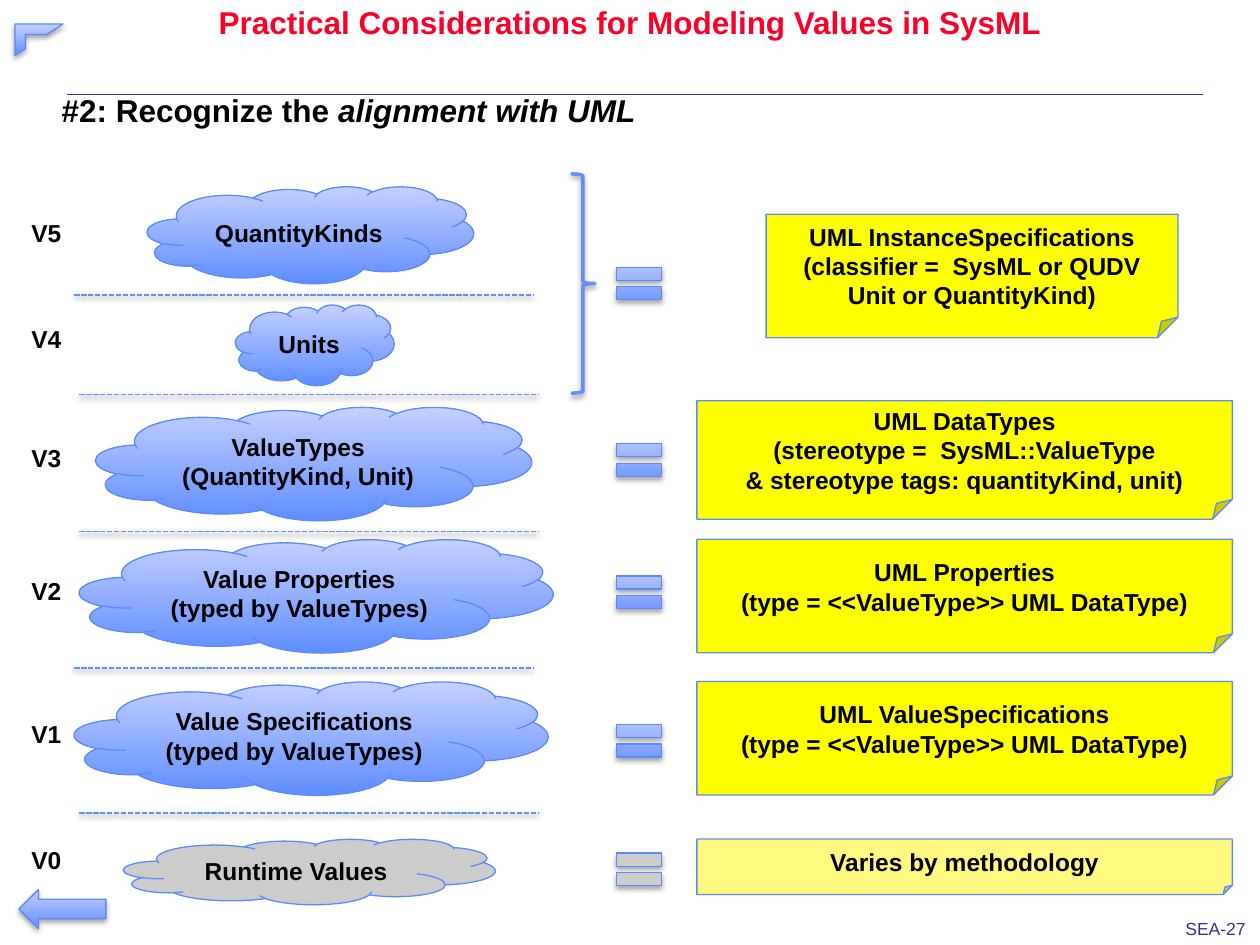
from lxml import etree
from pptx import Presentation
from pptx.dml.color import RGBColor
from pptx.enum.dml import MSO_LINE
from pptx.enum.shapes import MSO_CONNECTOR, MSO_SHAPE
from pptx.enum.text import MSO_ANCHOR, PP_ALIGN
from pptx.oxml.ns import qn
from pptx.util import Pt

CLOUD, NOTE = MSO_SHAPE.CLOUD, MSO_SHAPE.FOLDED_CORNER
EQUAL, BRACE = MSO_SHAPE.MATH_EQUAL, MSO_SHAPE.RIGHT_BRACE
ARROW, FRAME = MSO_SHAPE.LEFT_ARROW, MSO_SHAPE.HALF_FRAME
STRAIGHT, DASH = MSO_CONNECTOR.STRAIGHT, MSO_LINE.SQUARE_DOT
TOP, MIDDLE = MSO_ANCHOR.TOP, MSO_ANCHOR.MIDDLE
LEFT, CENTER = PP_ALIGN.LEFT, PP_ALIGN.CENTER

BLACK = RGBColor(0, 0, 0)
RED = RGBColor(0xFC, 0x01, 0x28)
NAVY = RGBColor(0x33, 0x33, 0x99)
EDGE = RGBColor(0x5B, 0x8A, 0xFB)
BLUE = RGBColor(0x61, 0x8F, 0xFD)
DEEP = RGBColor(0x5F, 0x8E, 0xFF)
PALE = RGBColor(0xC4, 0xD0, 0xFF)
GREY = RGBColor(0xCC, 0xCC, 0xCC)
YELLOW = RGBColor(0xFF, 0xFF, 0x00)
CREAM = RGBColor(0xFF, 0xF9, 0x81)
SHADE = (DEEP, PALE)

TITLE = "Practical Considerations for Modeling Values in SysML"
LEAD = [("#2: Recognize the ", False), ("alignment with UML", True)]
PAGE = "SEA-27"

LEVELS = [
    ("V5", 121, ["QuantityKinds"], (84.2, 106.6, 186.5, 55.4), SHADE),
    ("V4", 181.4, ["Units"], (134.6, 174.2, 90.7, 46.1), SHADE),
    ("V3", 249.8, ["ValueTypes", "(QuantityKind, Unit)"],
     (54.7, 232.6, 249.1, 64.8), SHADE),
    ("V2", 325.4, ["Value Properties", "(typed by ValueTypes)"],
     (45.4, 308.2, 270.7, 64.8), SHADE),
    ("V1", 407.5, ["Value Specifications", "(typed by ValueTypes)"],
     (42.5, 389.5, 270.7, 64.8), SHADE),
    ("V0", 479.5, ["Runtime Values"], (70.6, 479.5, 212.4, 37.4), GREY),
]
RULES = [(42.5, 168.5), (45.4, 225.4), (45.4, 303.8),
         (42.5, 381.6), (45.4, 464.4)]
NOTES = [
    (["UML InstanceSpecifications", "(classifier =  SysML or QUDV",
      "Unit or QuantityKind)"],
     (437.8, 122.4, 235.4, 70.6), YELLOW, 146.2, SHADE),
    (["UML DataTypes", "(stereotype =  SysML::ValueType",
      "& stereotype tags: quantityKind, unit)"],
     (398.2, 229, 306, 67.7), YELLOW, 247, SHADE),
    (["UML Properties", "(type = <<ValueType>> UML DataType)"],
     (398.2, 308.2, 306, 64.8), YELLOW, 322.6, SHADE),
    (["UML ValueSpecifications", "(type = <<ValueType>> UML DataType)"],
     (398.2, 389.5, 306, 64.8), YELLOW, 407.5, SHADE),
    (["Varies by methodology"],
     (398.2, 479.5, 306, 31.7), CREAM, 481, GREY),
]
ICONS = [(ARROW, (10.8, 508.3, 49.7, 22.3)), (FRAME, (8.6, 13.7, 27.4, 18))]


def write(frame, lines, size=14, color=BLACK, bold=True, align=CENTER,
          anchor=MIDDLE, wrap=True, space=None):
    frame.word_wrap = wrap
    frame.vertical_anchor = anchor
    for i, line in enumerate(lines):
        para = frame.add_paragraph() if i else frame.paragraphs[0]
        para.alignment = align
        if space:
            para.line_spacing = space
        for text, slant in [(line, False)] if isinstance(line, str) else line:
            run = para.add_run()
            run.text = text
            font = run.font
            font.name, font.size, font.bold = "Arial", Pt(size), bold
            font.color.rgb = color
            if slant:
                font.italic = True


def effect(item, alpha=0, dist=0):
    group = etree.SubElement(item.element.spPr, qn("a:effectLst"))
    if alpha:
        cast = etree.SubElement(
            group, qn("a:outerShdw"), blurRad=str(Pt(3.1)),
            dist=str(Pt(dist)), dir="5400000", rotWithShape="0")
        tint = etree.SubElement(cast, qn("a:srgbClr"), val="000000")
        etree.SubElement(tint, qn("a:alpha"), val=str(alpha * 1000))


def draw(kind, box, paint, alpha=0, dist=1.8, edge=EDGE, width=0.75):
    item = slide.shapes.add_shape(kind, *map(Pt, box))
    fill = item.fill
    if paint is None:
        fill.background()
    elif paint is SHADE:
        fill.gradient()
        fill.gradient_angle = 90
        for stop, color in zip(fill.gradient_stops, paint):
            stop.color.rgb = color
    else:
        fill.solid()
        fill.fore_color.rgb = paint
    item.line.color.rgb = edge
    item.line.width = Pt(width)
    effect(item, alpha, dist)
    return item


def rule(left, top, right, color, width):
    item = slide.shapes.add_connector(
        STRAIGHT, Pt(left), Pt(top), Pt(right), Pt(top))
    item.line.color.rgb = color
    item.line.width = Pt(width)
    return item


def label(box, lines, **style):
    item = slide.shapes.add_textbox(*map(Pt, box))
    write(item.text_frame, lines, align=LEFT, anchor=TOP, **style)


deck = Presentation()
deck.slide_width, deck.slide_height = Pt(720), Pt(540)
slide = deck.slides.add_slide(deck.slide_layouts[5])

effect(rule(38.2, 54, 687.6, NAVY, 0.13))
label((670.3, 521.3, 49, 18.7), [PAGE], size=10, color=NAVY,
      bold=False, wrap=False)

head = slide.shapes.title
head.left, head.top, head.width, head.height = map(Pt, (0, 0.7, 720, 51.8))
write(head.text_frame, [TITLE], size=18, color=RED, anchor=TOP, space=0.9)
label((28.1, 52.6, 676.1, 47.5), [LEAD], size=18, space=0.8)

for name, top, lines, box, paint in LEVELS:
    write(draw(CLOUD, box, paint).text_frame, lines)
    label((10.8, top, 31.7, 24.5), [name], wrap=False)

for left, top in RULES:
    line = rule(left, top, left + 262.4, BLUE, 1)
    line.line.dash_style = DASH
    effect(line, 38, 1.6)

draw(BRACE, (326.2, 99.4, 13.7, 125.3), None, 38, 1.6, BLUE, 2)

for lines, box, paint, top, sign in NOTES:
    write(draw(NOTE, box, paint).text_frame, lines)
    draw(EQUAL, (347.8, top, 34.6, 31.7), sign, 35)

for kind, box in ICONS:
    draw(kind, box, SHADE, 35)

deck.save("out.pptx")
